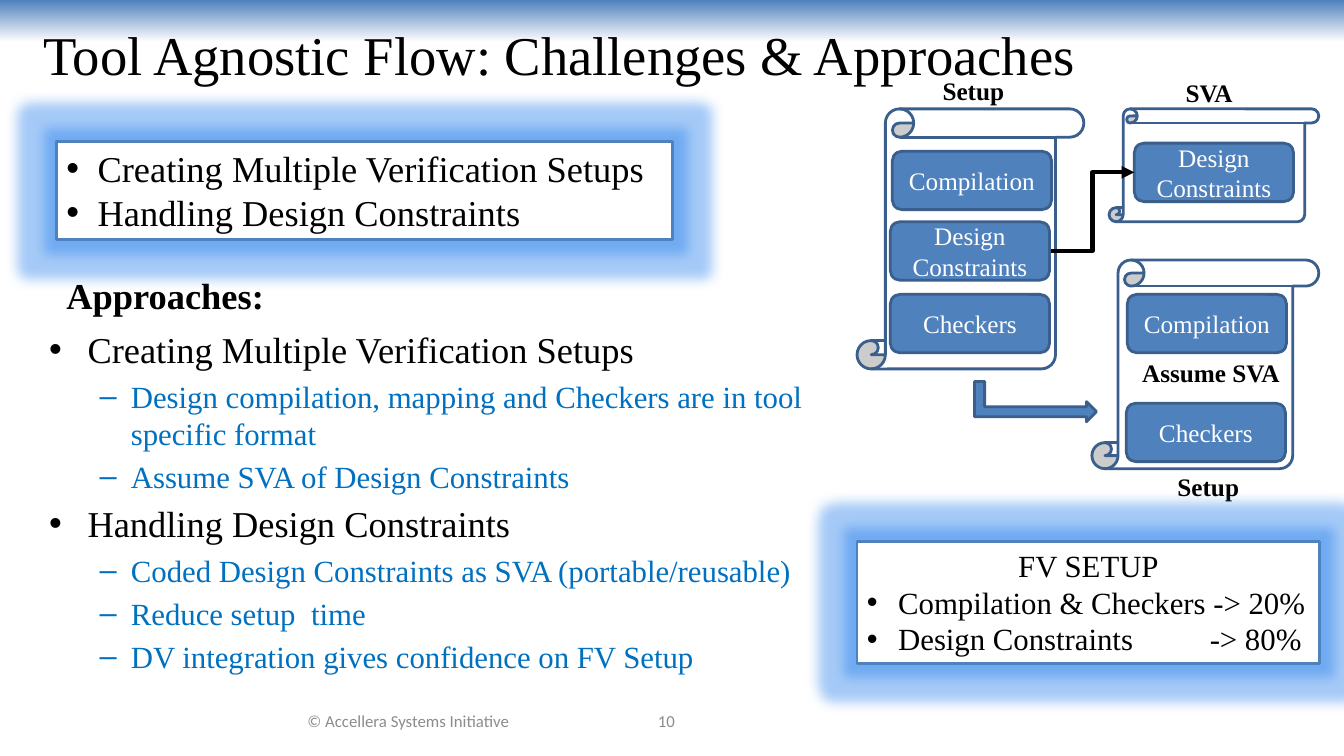
from lxml.etree import SubElement
from pptx import Presentation
from pptx.dml.color import RGBColor
from pptx.enum.shapes import MSO_CONNECTOR as CONN, MSO_SHAPE as SHAPE
from pptx.enum.text import MSO_ANCHOR as ANCHOR, PP_ALIGN as ALIGN
from pptx.oxml.ns import qn
from pptx.util import Inches, Pt

BLUE, EDGE, ACCENT = "4F81BD", "3A5F8C", "0070C0"
BLACK, WHITE, GREY, GLOW = "000000", "FFFFFF", "8C8C8C", "1F7BEB"
SERIF = "Times New Roman"

# Content: paragraphs are (text, level); level None has no bullet
TITLE = "Tool Agnostic Flow: Challenges & Approaches"
CHALLENGES = [("Creating Multiple Verification Setups", 0),
              ("Handling Design Constraints", 0)]
APPROACHES = [
    ("Creating Multiple Verification Setups", 0),
    ("Design compilation, mapping and Checkers are in tool specific format", 1),
    ("Assume SVA of Design Constraints", 1),
    ("Handling Design Constraints", 0),
    ("Coded Design Constraints as SVA (portable/reusable)", 1),
    ("Reduce setup  time", 1),
    ("DV integration gives confidence on FV Setup", 1),
]
FV_SETUP = [("FV SETUP", None),
            ("Compilation & Checkers -> 20%", 0),
            ("Design Constraints\t-> 80%", 0)]
FOOTERS = [("© Accellera Systems Initiative", (2.44, 6.95, 3.22, 0.4)),
           ("10", (5.33, 6.95, 2.56, 0.4))]

# Each scroll: its place, then its steps as (text, left, top)
SCROLLS = [
    ((8.5, 1.08, 2.25, 2.58), [("Compilation", 8.85, 1.5),
                               ("Design Constraints", 8.83, 2.2),
                               ("Checkers", 8.83, 2.92)]),
    ((11, 1.08, 2.08, 1.12), [("Design Constraints", 11.25, 1.42)]),
    ((10.83, 2.58, 2.25, 2.07), [("Compilation", 11.18, 2.92),
                                 ("Checkers", 11.17, 4)]),
]
STEP_SIZE = (1.58, 0.58)
LABELS = [("Setup", (9.25, 0.7, 1.17, 0.4)), ("SVA", (11.66, 0.72, 0.75, 0.4)),
          ("Assume SVA", (11.23, 3.5, 1.58, 0.4)),
          ("Setup", (11.58, 4.63, 1.17, 0.4))]


def color(value):
    return RGBColor.from_string(value)


def write(p, text, **fmt):
    r = p.add_run()
    r.text = text
    fmt = {"name": SERIF, "color": BLACK, **fmt}
    r.font.color.rgb = color(fmt.pop("color"))
    for key, value in fmt.items():
        setattr(r.font, key, value)


def bullet(p, char, left, hang, tab=None):
    pPr = p._p.get_or_add_pPr()
    pPr.set("marL", str(Inches(left)))
    pPr.set("indent", str(-Inches(hang)))
    SubElement(pPr, qn("a:buFont")).set("typeface", "Arial")
    SubElement(pPr, qn("a:buChar")).set("char", char)
    if tab:
        stop = SubElement(SubElement(pPr, qn("a:tabLst")), qn("a:tab"))
        stop.set("pos", str(Inches(tab)))
        stop.set("algn", "l")


def add_paragraph(tf, index):
    return tf.add_paragraph() if index else tf.paragraphs[0]


def textbox(s, text, place, anchor=ANCHOR.TOP, align=ALIGN.LEFT, **fmt):
    tf = s.shapes.add_textbox(*map(Inches, place)).text_frame
    tf.word_wrap, tf.vertical_anchor = True, anchor
    if text:
        tf.paragraphs[0].alignment = align
        write(tf.paragraphs[0], text, **fmt)
    return tf


def shape(s, kind, place, fill, line=EDGE):
    sp = s.shapes.add_shape(kind, *map(Inches, place))
    sp.shadow.inherit = False
    sp.fill.solid()
    sp.fill.fore_color.rgb = color(fill)
    sp.line.color.rgb = color(line)
    sp.line.width = Pt(2)
    return sp


def glowing_box(s, place, lines, size, tab=None):
    sp = shape(s, SHAPE.RECTANGLE, place, WHITE, BLUE)
    effects = sp._element.spPr.find(qn("a:effectLst"))
    glow = SubElement(effects, qn("a:glow"))
    glow.set("rad", str(Inches(0.25)))
    tint = SubElement(glow, qn("a:srgbClr"))
    tint.set("val", GLOW)
    SubElement(tint, qn("a:alpha")).set("val", "40000")
    tf = sp.text_frame
    tf.word_wrap, tf.vertical_anchor = True, ANCHOR.TOP
    for i, (text, level) in enumerate(lines):
        p = add_paragraph(tf, i)
        p.alignment = ALIGN.CENTER if level is None else ALIGN.LEFT
        if level is not None:
            bullet(p, "•", 0.31, 0.31, tab)
        write(p, text, size=Pt(size))


prs = Presentation()
prs.slide_width, prs.slide_height = Inches(13.33), Inches(7.5)
s = prs.slides.add_slide(prs.slide_layouts[6])

# Top band and title
band = shape(s, SHAPE.RECTANGLE, (0, 0, 13.33, 0.42), BLUE)
band.line.fill.background()
band.fill.gradient()
band.fill.gradient_angle = 270
for stop, value, position in zip(band.fill.gradient_stops, (BLUE, WHITE), (0, 1)):
    stop.color.rgb = color(value)
    stop.position = position
textbox(s, TITLE, (0.33, 0.07, 12.67, 0.93), ANCHOR.MIDDLE, size=Pt(39))

# Approaches list
tf = textbox(s, "", (0.39, 3.2, 7.86, 3.42))
LEVELS = [("•", 0.38, 0.38, 26, BLACK), ("–", 0.81, 0.31, 22, ACCENT)]
for i, (text, level) in enumerate(APPROACHES):
    char, left, hang, size, ink = LEVELS[level]
    p = add_paragraph(tf, i)
    bullet(p, char, left, hang)
    if i:
        p.space_before = Pt(size * 0.2)
    write(p, text, size=Pt(size), color=ink)

# Footer
for text, place in FOOTERS:
    textbox(s, text, place, ANCHOR.MIDDLE, ALIGN.CENTER,
            size=Pt(12), name="Calibri", color=GREY)

# Challenges box and heading
glowing_box(s, (0.56, 1.4, 6.11, 0.98), CHALLENGES, 26)
textbox(s, "Approaches:", (0.56, 2.66, 3.92, 0.54), size=Pt(26), bold=True)

# Scrolls with their steps
for place, steps in SCROLLS:
    shape(s, SHAPE.VERTICAL_SCROLL, place, WHITE)
    for text, left, top in steps:
        tf = shape(s, SHAPE.ROUNDED_RECTANGLE, (left, top, *STEP_SIZE), BLUE).text_frame
        tf.word_wrap, tf.vertical_anchor = True, ANCHOR.MIDDLE
        tf.paragraphs[0].alignment = ALIGN.CENTER
        write(tf.paragraphs[0], text, size=Pt(18), color=WHITE)

# Arrows between scrolls
link = s.shapes.add_connector(CONN.ELBOW, *map(Inches, (10.42, 2.49, 11.25, 1.71)))
link.line.color.rgb = color(BLACK)
link.line.width = Pt(3)
SubElement(link.line._get_or_add_ln(), qn("a:tailEnd")).set("type", "triangle")
SubElement(link._element.spPr, qn("a:effectLst"))
shape(s, SHAPE.BENT_UP_ARROW, (10.07, 3.38, 0.4, 1.21), BLUE).rotation = 90

# Scroll labels
for text, place in LABELS:
    textbox(s, text, place, size=Pt(18), bold=True)

# Effort split
glowing_box(s, (8.5, 5.37, 4.59, 1.21), FV_SETUP, 22, tab=3.4)

prs.save("out.pptx")
